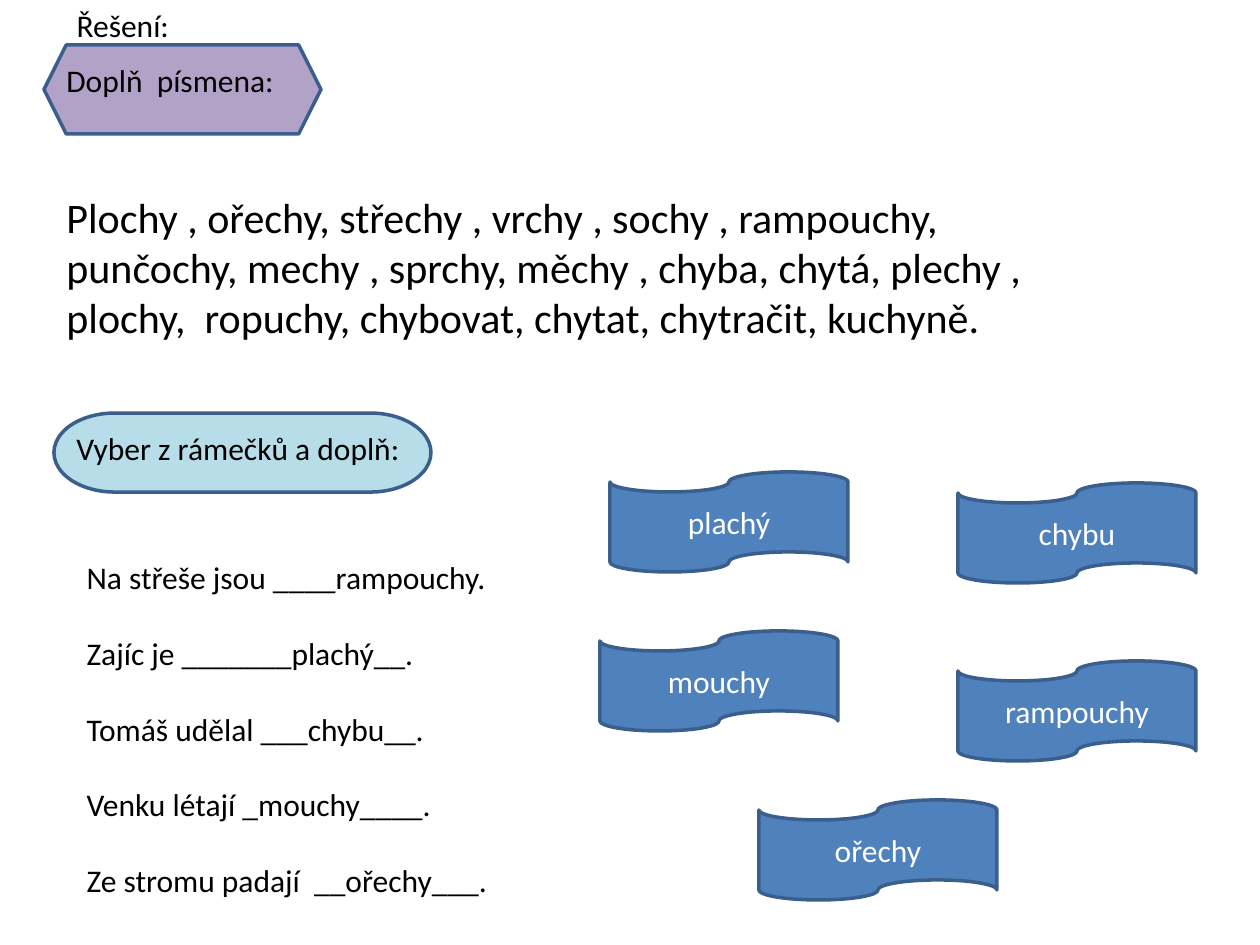
from lxml.etree import SubElement
from pptx import Presentation
from pptx.dml.color import RGBColor
from pptx.enum.shapes import MSO_SHAPE as Shape
from pptx.enum.text import MSO_ANCHOR as Anchor, MSO_AUTO_SIZE as AutoSize, PP_ALIGN as Align
from pptx.oxml.ns import qn
from pptx.util import Inches, Pt

PX = Inches(1) / 126
COLORS = {
    "text": "000000", "label": "FFFFFF", "outline": "3A5F8C",
    "tape": "4F81BD", "hexagon": "B3A2C7", "pill": "B7DEE8",
}
FONT = "Calibri"
TAPE_SIZE = (238, 100)
TAPES = [
    ("ořechy", 759, 800), ("mouchy", 600, 631), ("rampouchy", 958, 661),
    ("plachý", 610, 472), ("chybu", 958, 483),
]
SENTENCES = [
    "Na střeše jsou ____rampouchy.",
    "Zajíc je _______plachý__.",
    "Tomáš udělal ___chybu__.",
    "Venku létají _mouchy____.",
    "Ze stromu padají  __ořechy___.",
]
WORDS = (
    "Plochy , ořechy, střechy , vrchy , sochy , rampouchy, punčochy, mechy , "
    "sprchy, měchy , chyba, chytá, plechy , plochy,  ropuchy, chybovat, chytat, "
    "chytračit, kuchyně."
)


def emu(*lengths):
    return [round(length * PX) for length in lengths]


class Worksheet:
    """Draws the elements of one worksheet slide in a shared style."""

    def __init__(self, slide):
        self.slide = slide

    def add_lines(self, shape, lines, size=18, color="text", align=Align.LEFT, gap=0):
        frame = shape.text_frame
        frame.word_wrap = True
        for index, line in enumerate(lines):
            paragraph = frame.add_paragraph() if index else frame.paragraphs[0]
            paragraph.alignment = align
            paragraph.space_before = Pt(0)
            paragraph.space_after = Pt(gap if index < len(lines) - 1 else 0)
            run = paragraph.add_run()
            run.text = line
            run.font.name = FONT
            run.font.size = Pt(size)
            run.font.color.rgb = RGBColor.from_string(COLORS[color])

    def shape(self, kind, box, fill):
        shape = self.slide.shapes.add_shape(kind, *emu(*box))
        shape.shadow.inherit = False
        shape.fill.solid()
        shape.fill.fore_color.rgb = RGBColor.from_string(COLORS[fill])
        shape.line.color.rgb = RGBColor.from_string(COLORS["outline"])
        shape.line.width = Pt(2)
        return shape

    def tape(self, word, left, top):
        shape = self.shape(Shape.FLOWCHART_PUNCHED_TAPE, (left, top, *TAPE_SIZE), "tape")
        shape.text_frame.vertical_anchor = Anchor.MIDDLE
        self.add_lines(shape, [word], color="label", align=Align.CENTER)

    def text(self, line, box, size=18):
        shape = self.slide.shapes.add_textbox(*emu(*box))
        self.add_lines(shape, [line], size)
        shape.text_frame.auto_size = AutoSize.SHAPE_TO_FIT_TEXT

    def placeholder(self, shape, lines, box, gap=0):
        shape.left, shape.top, shape.width, shape.height = emu(*box)
        shape.text_frame.vertical_anchor = Anchor.TOP
        shape.text_frame.auto_size = AutoSize.SHAPE_TO_FIT_TEXT
        self.add_lines(shape, lines, gap=gap)
        for paragraph in shape.text_frame.paragraphs:
            properties = paragraph._p.get_or_add_pPr()
            properties.set("marL", "0")
            properties.set("indent", "0")
            SubElement(properties, qn("a:buNone"))


def main():
    presentation = Presentation()
    presentation.slide_width, presentation.slide_height = Inches(10), Inches(7.5)
    slide = presentation.slides.add_slide(presentation.slide_layouts[1])
    sheet = Worksheet(slide)

    sheet.placeholder(slide.shapes.title, ["Řešení:"], (64, 0, 189, 50))
    sheet.placeholder(slide.placeholders[1], SENTENCES, (74, 552, 466, 357), gap=21.6)

    sheet.shape(Shape.FLOWCHART_TERMINATOR, (54, 413, 377, 79), "pill")
    sheet.shape(Shape.HEXAGON, (44, 45, 277, 89), "hexagon")
    sheet.text("Doplň  písmena:", (54, 55, 507, 50))
    sheet.text(WORDS, (54, 185, 1032, 217), size=24)
    for word, left, top in TAPES:
        sheet.tape(word, left, top)
    sheet.text("Vyber z rámečků a doplň:", (64, 423, 367, 50))

    presentation.save("out.pptx")


if __name__ == "__main__":
    main()
